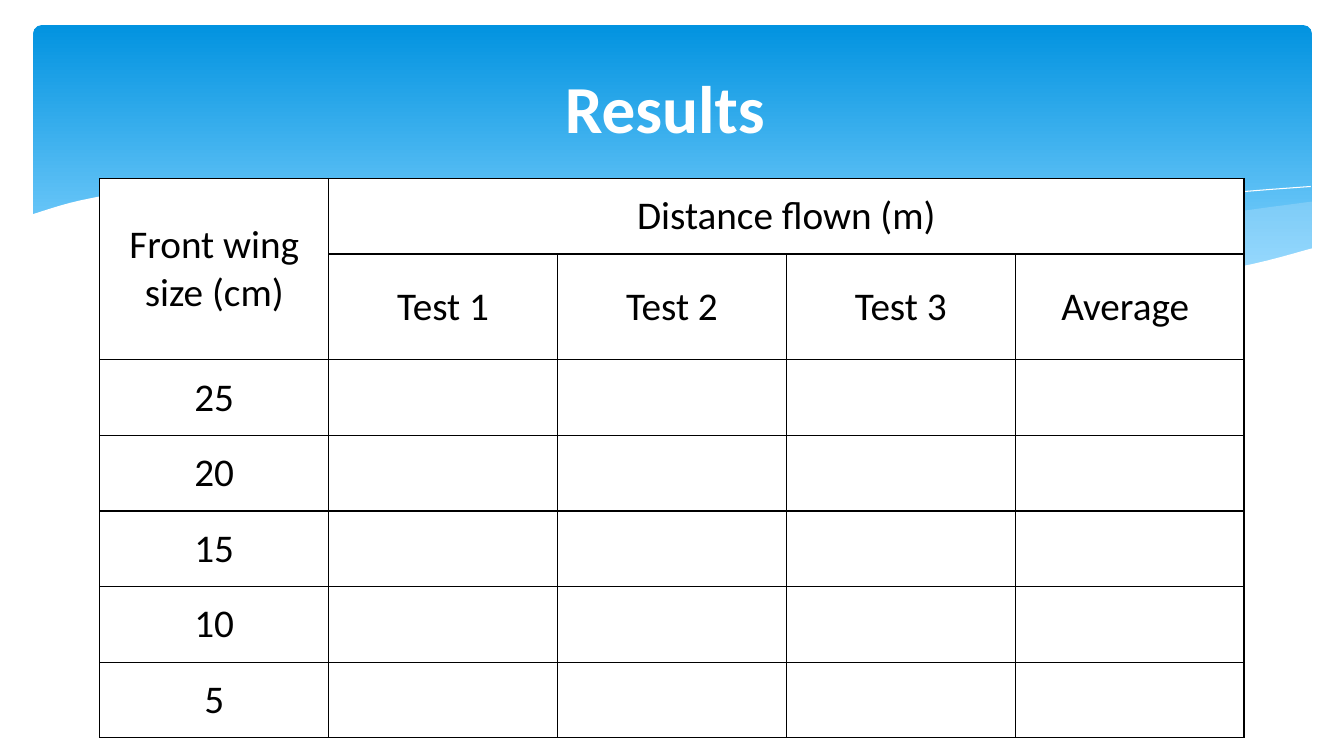
from lxml.etree import SubElement
from pptx import Presentation
from pptx.dml.color import RGBColor
from pptx.enum.shapes import MSO_SHAPE
from pptx.enum.text import MSO_ANCHOR, PP_ALIGN
from pptx.oxml.ns import qn
from pptx.util import Inches, Pt

WHITE = RGBColor(0xFF, 0xFF, 0xFF)
BLACK = RGBColor(0x00, 0x00, 0x00)
PALE_BLUE = RGBColor(0xC6, 0xE7, 0xFC)
DEEP_BLUE = RGBColor(0x02, 0x93, 0xE0)
SKY_BLUE = RGBColor(0x83, 0xD3, 0xFE)
FONT = "Calibri"
CURVE_STEPS = 6

prs = Presentation()
prs.slide_width, prs.slide_height = Inches(13.33), Inches(7.5)
s = prs.slides.add_slide(prs.slide_layouts[6])


def smooth(knots):
    """Return points on a Catmull-Rom curve through the knots, in EMU."""
    padded = [knots[0], *knots, knots[-1]]
    points = []
    for a, b, c, d in zip(padded, padded[1:], padded[2:], padded[3:]):
        for step in range(CURVE_STEPS):
            t = step / CURVE_STEPS
            points.append([Inches(q + t * (r - p) / 2
                                  + t ** 2 * (2 * p - 5 * q + 4 * r - u) / 2
                                  + t ** 3 * (3 * q - p - 3 * r + u) / 2)
                           for p, q, r, u in zip(a, b, c, d)])
    return points + [[Inches(v) for v in knots[-1]]]


def style_text(tf, text, size, color, bold=False):
    tf.text = text
    p = tf.paragraphs[0]
    p.alignment = PP_ALIGN.CENTER
    p.font.name, p.font.size, p.font.bold = FONT, Pt(size), bold
    p.font.color.rgb = color


# Blue banner
banner = s.shapes.add_shape(MSO_SHAPE.ROUNDED_RECTANGLE, Inches(0.33), Inches(0.25),
                            Inches(12.68), Inches(2.7))
banner.adjustments[0] = 0.03
banner.shadow.inherit = False
banner.line.fill.background()
banner.fill.gradient()
banner.fill.gradient_angle = 270
for stop, position, color in zip(banner.fill.gradient_stops, (0, 0.9), (DEEP_BLUE, SKY_BLUE)):
    stop.position = position
    stop.color.rgb = color

# Knots of each wave edge, in inches; a closed wave runs along its top and back along its bottom
right_top = [(13.01, 2), (12.27, 2.1), (11.47, 2.23), (10.05, 2.48), (8.82, 2.65)]
right_bottom = [(8.82, 2.65), (9.76, 2.74), (10.71, 2.78), (11.63, 2.74), (12.38, 2.63),
                (13.01, 2.47)]
middle_top = [(11.9, 2.73), (10.34, 2.54), (8.39, 2.22), (7.03, 2), (5.89, 1.89),
              (4.82, 1.85), (3.82, 1.91)]
middle_bottom = [(3.82, 1.91), (4.83, 2.03), (5.99, 2.22), (7.55, 2.48), (9.07, 2.68),
                 (10.61, 2.78), (11.9, 2.73)]
falling_line = [(4.12, 1.95), (5.35, 1.87), (6.8, 1.92), (8.48, 2.08), (10.14, 2.33),
                (12.1, 2.72)]
rising_line = [(8.18, 2.57), (9.61, 2.29), (11.15, 2.04), (12.13, 1.92), (13, 1.85)]
front_top = [(13.03, 2.46), (12.27, 2.65), (11.34, 2.75), (10.15, 2.75), (8.63, 2.62),
             (7.06, 2.39), (5.96, 2.2), (4.53, 1.97), (3.33, 1.86), (2.35, 1.84),
             (1.42, 1.89), (0.79, 1.99), (0.31, 2.13)]
front_bottom = [(0.31, 3.29), (13.03, 3.29)]

# Waves from back to front: edges, fill, opacity in percent
waves = [
    ([right_top, right_bottom], PALE_BLUE, 29),
    ([middle_top, middle_bottom], PALE_BLUE, 40),
    ([falling_line], None, 100),
    ([rising_line], None, 100),
    ([front_top, front_bottom], WHITE, 100),
]
for edges, color, opacity in waves:
    points = [point for edge in edges for point in smooth(edge)]
    fb = s.shapes.build_freeform(*points[0])
    fb.add_line_segments(points[1:], close=color is not None)
    sp = fb.convert_to_shape()
    sp.shadow.inherit = False
    if color is None:
        sp.fill.background()
        sp.line.color.rgb = WHITE
        sp.line.width = Pt(0)
    else:
        sp.fill.solid()
        sp.fill.fore_color.rgb = color
        sp.line.fill.background()
        rgb = sp._element.spPr.find(".//" + qn("a:srgbClr"))
        SubElement(rgb, qn("a:alpha"), val=str(opacity * 1000))

# Title
title = s.shapes.add_textbox(Inches(0.67), Inches(0.37), Inches(12), Inches(1.37))
tf = title.text_frame
tf.word_wrap = True
tf.vertical_anchor = MSO_ANCHOR.MIDDLE
style_text(tf, "Results ", 48, WHITE, bold=True)

# Results table: two heading rows, then one empty row for each wing size
WING_SIZES = range(25, 0, -5)
COL_W, ROW_H, TEST_ROW_H = 2.27, 0.75, 1.05
texts = {(0, 0): "Front wing size (cm)", (0, 1): "Distance flown (m)"}
for col, heading in enumerate(["Test 1", "Test 2", "Test 3", "Average "], start=1):
    texts[1, col] = heading
for row, size in enumerate(WING_SIZES, start=2):
    texts[row, 0] = str(size)

n_rows, n_cols = 2 + len(WING_SIZES), 5
table = s.shapes.add_table(n_rows, n_cols, Inches(0.99), Inches(1.77), Inches(COL_W * n_cols),
                           Inches(ROW_H * (n_rows - 1) + TEST_ROW_H)).table
table.first_row = table.horz_banding = False
for column in table.columns:
    column.width = Inches(COL_W)
for row in table.rows:
    row.height = Inches(ROW_H)
table.rows[1].height = Inches(TEST_ROW_H)

for cell in table.iter_cells():
    cell.vertical_anchor = MSO_ANCHOR.MIDDLE
    tcPr = cell._tc.get_or_add_tcPr()
    for side in ("lnL", "lnR", "lnT", "lnB"):
        border = SubElement(tcPr, qn(f"a:{side}"), w=str(Pt(1)))
        SubElement(SubElement(border, qn("a:solidFill")), qn("a:srgbClr"), val=str(BLACK))
    cell.fill.solid()
    cell.fill.fore_color.rgb = WHITE
for (row, col), text in texts.items():
    style_text(table.cell(row, col).text_frame, text, 28, BLACK)
table.cell(0, 0).merge(table.cell(1, 0))
table.cell(0, 1).merge(table.cell(0, n_cols - 1))

prs.save("out.pptx")
